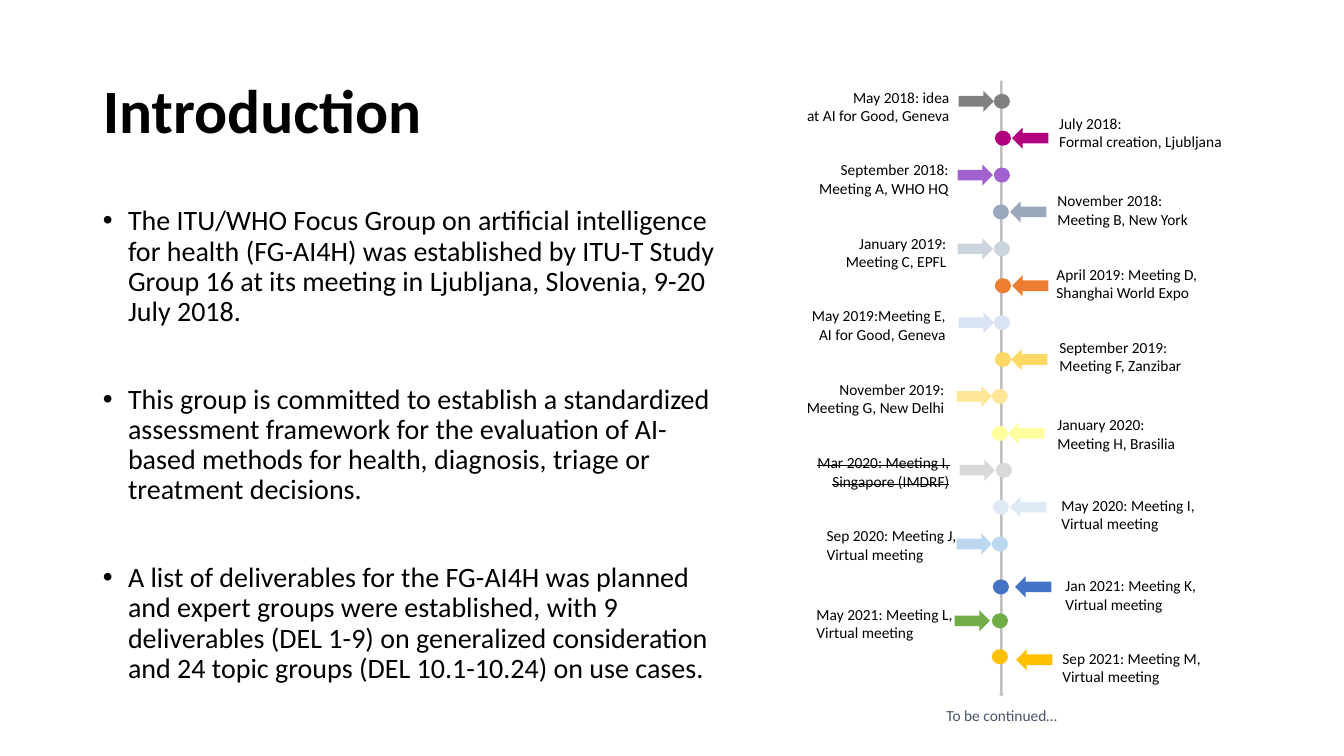
from pptx import Presentation
from pptx.dml.color import RGBColor as RGB
from pptx.enum.shapes import MSO_SHAPE as Kind
from pptx.enum.text import MSO_ANCHOR as Anchor, MSO_AUTO_SIZE as Fit, PP_ALIGN as Align
from pptx.util import Inches, Pt
from lxml.etree import SubElement
from pptx.oxml.ns import qn

# Grid: square cells of a tenth of an inch
CELL = Inches(0.1)
WIDE, HIGH = 133.33, 75

FONT = "Calibri"
BLACK = RGB(0x00, 0x00, 0x00)
SLATE = RGB(0x44, 0x54, 0x6A)
SILVER = RGB(0xBF, 0xBF, 0xBF)
GRAY = RGB(0x80, 0x80, 0x80)
BERRY = RGB(0xB0, 0x00, 0x7E)
VIOLET = RGB(0xA1, 0x62, 0xD0)
STEEL = RGB(0x99, 0xA8, 0xBD)
MIST = RGB(0xCC, 0xD4, 0xDE)
ORANGE = RGB(0xED, 0x7D, 0x31)
ICE = RGB(0xDA, 0xE3, 0xF3)
GOLD = RGB(0xFF, 0xD9, 0x66)
SAND = RGB(0xFF, 0xE6, 0x99)
LEMON = RGB(0xFF, 0xFF, 0x9F)
ASH = RGB(0xD9, 0xD9, 0xD9)
PALE = RGB(0xDE, 0xEB, 0xF7)
SKY = RGB(0xBD, 0xD7, 0xEE)
BLUE = RGB(0x44, 0x72, 0xC4)
GREEN = RGB(0x70, 0xAD, 0x47)
AMBER = RGB(0xFF, 0xC0, 0x00)

POINTS = [
    "The ITU/WHO Focus Group on artificial intelligence for health (FG-AI4H) was "
    "established by ITU-T Study Group 16 at its meeting in Ljubljana, Slovenia, "
    "9-20 July 2018.",
    "This group is committed to establish a standardized assessment framework for "
    "the evaluation of AI-based methods for health, diagnosis, triage or treatment "
    "decisions.",
    "A list of deliverables for the FG-AI4H was planned and expert groups were "
    "established, with 9 deliverables (DEL 1-9) on generalized consideration and "
    "24 topic groups (DEL 10.1-10.24) on use cases.",
]

# Label insets in cells: (side, top)
SLIM, ROOMY = (1, 0.5), (1.3, 1.3)

# Label, colour, dot column, arrow column, label box, label inset
EVENTS = [
    ("May 2018: idea\nat AI for Good, Geneva", GRAY, 98.6, 95.1, (78.7, 7.4, 16.8, 6.9), ROOMY),
    ("July 2018:\nFormal creation, Ljubljana", BERRY, 98.7, 100.4, (104.1, 10.8, 20.6, 4.3), SLIM),
    ("September 2018:\nMeeting A, WHO HQ", VIOLET, 98.6, 95, (79.6, 15.4, 15.5, 4.3), SLIM),
    ("November 2018:\nMeeting B, New York", STEEL, 98.5, 100.2, (103.6, 17.7, 22.5, 4.7), ROOMY),
    ("January 2019:\nMeeting C, EPFL", MIST, 98.6, 95, (81.5, 21.9, 13.7, 6.9), ROOMY),
    ("April 2019: Meeting D,\nShanghai World Expo", ORANGE, 98.7, 100.4, (103.5, 25, 22.6, 6), ROOMY),
    ("May 2019:Meeting E,\nAI for Good, Geneva", ICE, 98.6, 95.1, (79.3, 29.9, 15.5, 4.3), SLIM),
    ("September 2019:\nMeeting F, Zanzibar", GOLD, 98.7, 100.3, (103.8, 32.2, 18.8, 4.7), ROOMY),
    ("November 2019:\nMeeting G, New Delhi", SAND, 98.4, 94.9, (78.4, 36.4, 16.6, 6.9), ROOMY),
    ("January 2020: Meeting H, Brasilia", LEMON, 98.4, 100, (103.6, 39.9, 15.7, 6), ROOMY),
    ("Mar 2020: Meeting I, Singapore (IMDRF)", ASH, 98.8, 95.2, (79.4, 43.7, 16.1, 6), ROOMY),
    ("May 2020: Meeting I, Virtual meeting", PALE, 98.5, 100.2, (104, 47.9, 16.1, 6), ROOMY),
    ("Sep 2020: Meeting J, Virtual meeting", SKY, 98.4, 94.9, (80.7, 50.9, 16.1, 6), ROOMY),
    ("Jan 2021: Meeting K, Virtual meeting", BLUE, 98.5, 100.7, (104.4, 55.9, 16.1, 6), ROOMY),
    ("May 2021: Meeting L, Virtual meeting", GREEN, 98.4, 94.7, (79.7, 58.7, 16.8, 6), ROOMY),
    ("Sep 2021: Meeting M, Virtual meeting", AMBER, 98.4, 100.8, (104.1, 63.1, 16.8, 6), ROOMY),
]
FIRST, STEP = 9.3, 3.66
LAG = {13: 0.6, 14: 0.3, 15: 0.2}
VOID = 10  # the struck-out meeting
FLUSH = 12  # from here on every label is set flush left


def cells(*sizes):
    return [round(size * CELL) for size in sizes]


def write(frame, text, size=11, color=BLACK, bold=False, align=Align.LEFT,
          line=1.0, gap=0, inset=SLIM, anchor=Anchor.TOP, strike=False, wrap=True):
    """Fill a text frame, one paragraph for each line of text."""
    frame.text = text
    frame.word_wrap = wrap
    frame.auto_size = Fit.NONE
    frame.vertical_anchor = anchor
    side, top = cells(*inset)
    frame.margin_left = frame.margin_right = side
    frame.margin_top = frame.margin_bottom = top
    for num, para in enumerate(frame.paragraphs):
        para.alignment = align
        para.line_spacing = line
        para.space_before = Pt(gap if num else 0)
        for run in para.runs:
            font = run.font
            font.name, font.size, font.bold = FONT, Pt(size), bold
            font.color.rgb = color
            if strike:
                run._r.get_or_add_rPr().set("strike", "sngStrike")


def place(item, box):
    item.left, item.top, item.width, item.height = cells(*box)


def bullet(para):
    props = para._p.get_or_add_pPr()
    props.set("marL", str(Inches(0.25)))
    props.set("indent", str(-Inches(0.25)))
    SubElement(props, qn("a:buFont")).set("typeface", "Arial")
    SubElement(props, qn("a:buChar")).set("char", "•")


def label(shapes, text, box, **form):
    write(shapes.add_textbox(*cells(*box)).text_frame, text, **form)


def mark(shapes, kind, box, color):
    shape = shapes.add_shape(kind, *cells(*box))
    shape.shadow.inherit = False
    shape.fill.solid()
    shape.fill.fore_color.rgb = color
    shape.line.fill.background()


def event(shapes, num):
    text, color, dot, arrow, box, inset = EVENTS[num]
    left = num % 2 == 0
    top = FIRST + num * STEP + LAG.get(num, 0)
    rise = 0 if num == len(EVENTS) - 1 else 0.3
    kind, width = (Kind.RIGHT_ARROW, 3.5) if left else (Kind.LEFT_ARROW, 3.6)
    mark(shapes, Kind.OVAL, (dot, top, 1.6, 1.5), color)
    mark(shapes, kind, (arrow, top - rise, width, 2.1), color)
    label(shapes, text, box, inset=inset, strike=num == VOID,
          align=Align.RIGHT if left and num < FLUSH else Align.LEFT)


def main():
    deck = Presentation()
    deck.slide_width, deck.slide_height = cells(WIDE, HIGH)
    slide = deck.slides.add_slide(deck.slide_layouts[1])

    # Title and bullet list
    title, body = slide.placeholders
    place(title, (9.2, 4, 115, 14.5))
    write(title.text_frame, "Introduction", size=44, bold=True, line=0.9,
          anchor=Anchor.MIDDLE)
    place(body, (9.2, 20, 63.6, 47.6))
    write(body.text_frame, "\n".join(POINTS), size=20, line=0.9, gap=41)
    for para in body.text_frame.paragraphs:
        bullet(para)

    # Timeline
    shapes = slide.shapes.add_group_shape().shapes
    mark(shapes, Kind.DOWN_ARROW, (99.1, 8, 0.5, 61.1), SILVER)
    for num in range(len(EVENTS)):
        event(shapes, num)
    label(shapes, "To be continued…", (92.9, 69.6, 13.2, 2.9), color=SLATE, wrap=False)

    deck.save("out.pptx")


if __name__ == "__main__":
    main()
